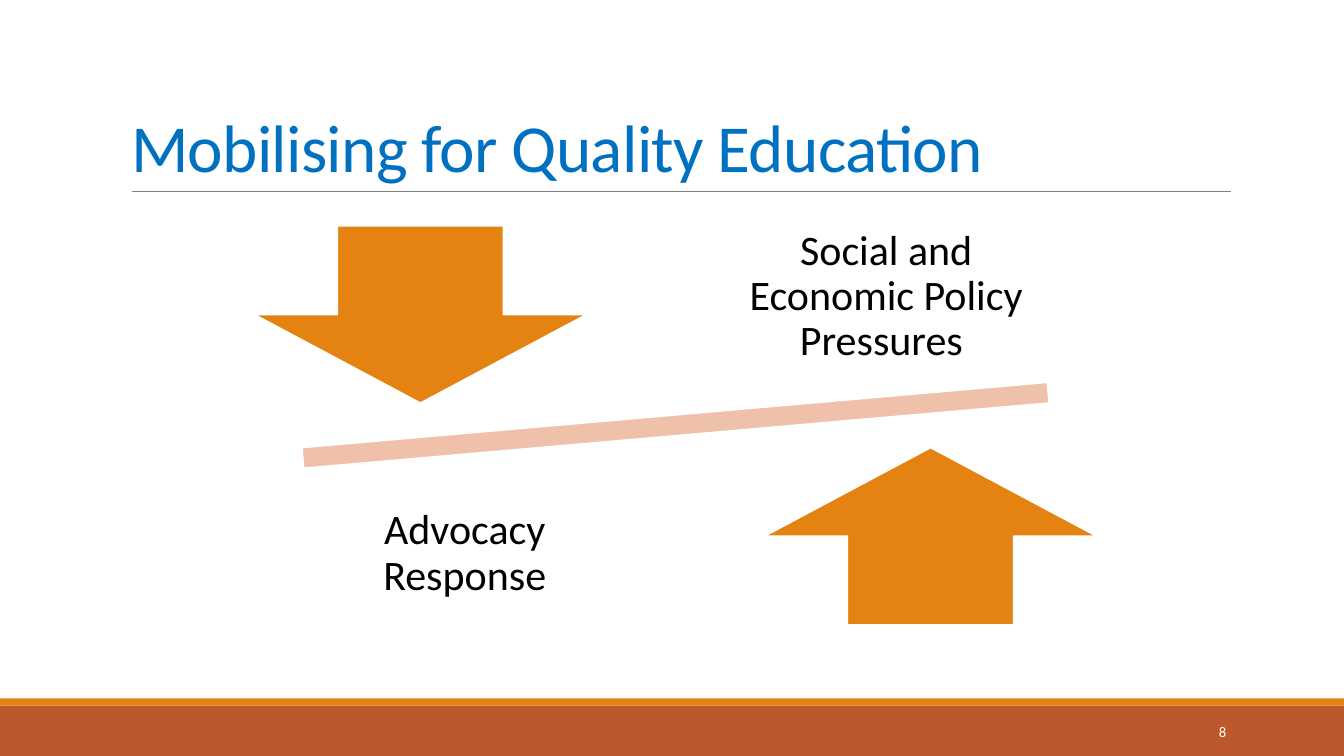
from typing import NamedTuple

from lxml import etree
from pptx import Presentation
from pptx.dml.color import RGBColor
from pptx.enum.shapes import MSO_CONNECTOR, MSO_SHAPE
from pptx.enum.text import MSO_ANCHOR, PP_ALIGN
from pptx.oxml.ns import qn
from pptx.util import Inches, Pt

RECT = MSO_SHAPE.RECTANGLE
MINUS = MSO_SHAPE.MATH_MINUS
DOWN = MSO_SHAPE.DOWN_ARROW
UP = MSO_SHAPE.UP_ARROW
STRAIGHT = MSO_CONNECTOR.STRAIGHT
MIDDLE, BOTTOM = MSO_ANCHOR.MIDDLE, MSO_ANCHOR.BOTTOM
LEFT, CENTER, RIGHT = PP_ALIGN.LEFT, PP_ALIGN.CENTER, PP_ALIGN.RIGHT

COLORS = {
    "rust": "BD582C",
    "orange": "E48312",
    "peach": "EFC1AB",
    "gray": "808080",
    "blue": "0070C0",
    "black": "000000",
    "white": "FFFFFF",
}


class Box(NamedTuple):
    left: float
    top: float
    width: float
    height: float


class Figure(NamedTuple):
    kind: int
    box: Box
    fill: str
    edge: float = 0
    angle: float = 0


class Label(NamedTuple):
    text: str
    box: Box


FIGURES = [
    Figure(RECT, Box(0, 7, 13.33, 0.5), "rust"),
    Figure(RECT, Box(0, 6.93, 13.33, 0.07), "orange"),
    Figure(MINUS, Box(1.65, 3.78, 10.1, 0.88), "peach", 1.25, 355),
    Figure(DOWN, Box(2.52, 2.24, 3.3, 1.76), "orange", 1.25),
    Figure(UP, Box(7.58, 4.44, 3.3, 1.76), "orange", 1.25),
]

LABELS = [
    Label("Social and Economic Policy Pressures ", Box(7.03, 2.02, 3.52, 1.85)),
    Label("Advocacy Response", Box(2.85, 4.57, 3.52, 1.85)),
]


def color(name: str) -> RGBColor:
    return RGBColor.from_string(COLORS[name])


def place(shape, box: Box) -> None:
    shape.left, shape.top, shape.width, shape.height = map(Inches, box)


def draw(slide, figure: Figure) -> None:
    shape = slide.shapes.add_shape(figure.kind, *map(Inches, figure.box))
    shape.shadow.inherit = False
    shape.rotation = figure.angle
    shape.fill.solid()
    shape.fill.fore_color.rgb = color(figure.fill)
    if figure.edge:
        shape.line.color.rgb = color("white")
        shape.line.width = Pt(figure.edge)
    else:
        shape.line.fill.background()


def rule(slide, left: float, right: float, top: float) -> None:
    line = slide.shapes.add_connector(
        STRAIGHT, Inches(left), Inches(top), Inches(right), Inches(top))
    line.line.color.rgb = color("gray")
    line.line.width = Pt(0.5)
    etree.SubElement(line._element.spPr, qn("a:effectLst"))


def write(shape, text: str, *, size: float, ink: str, align=LEFT,
          anchor=MIDDLE, inset: float = 0, leading: float = 1,
          tracking: float = 0) -> None:
    frame = shape.text_frame
    frame.word_wrap = True
    frame.vertical_anchor = anchor
    if inset:
        frame.margin_left = frame.margin_right = Inches(inset)
        frame.margin_top = frame.margin_bottom = Inches(inset)
    para = frame.paragraphs[0]
    para.alignment = align
    para.line_spacing = leading
    run = para.add_run()
    run.text = text
    run.font.name = "Calibri"
    run.font.size = Pt(size)
    run.font.color.rgb = color(ink)
    if tracking:
        run._r.get_or_add_rPr().set("spc", str(round(tracking * 100)))


def main() -> None:
    deck = Presentation()
    deck.slide_width, deck.slide_height = Inches(13.33), Inches(7.5)
    slide = deck.slides.add_slide(deck.slide_layouts[5])
    title = slide.shapes.title
    place(title, Box(1.2, 0.31, 11, 1.59))
    write(title, "Mobilising for Quality Education", size=48, ink="blue",
          anchor=BOTTOM, leading=0.85, tracking=-0.5)
    rule(slide, 1.31, 12.21, 1.9)
    for figure in FIGURES:
        draw(slide, figure)
    for label in LABELS:
        box = slide.shapes.add_textbox(*map(Inches, label.box))
        write(box, label.text, size=30, ink="black", align=CENTER,
              inset=0.23, leading=0.9)
    number = slide.shapes.add_textbox(*map(Inches, Box(10.83, 7.06, 1.43, 0.4)))
    write(number, "8", size=10.5, ink="white", align=RIGHT)
    deck.save("out.pptx")


if __name__ == "__main__":
    main()
